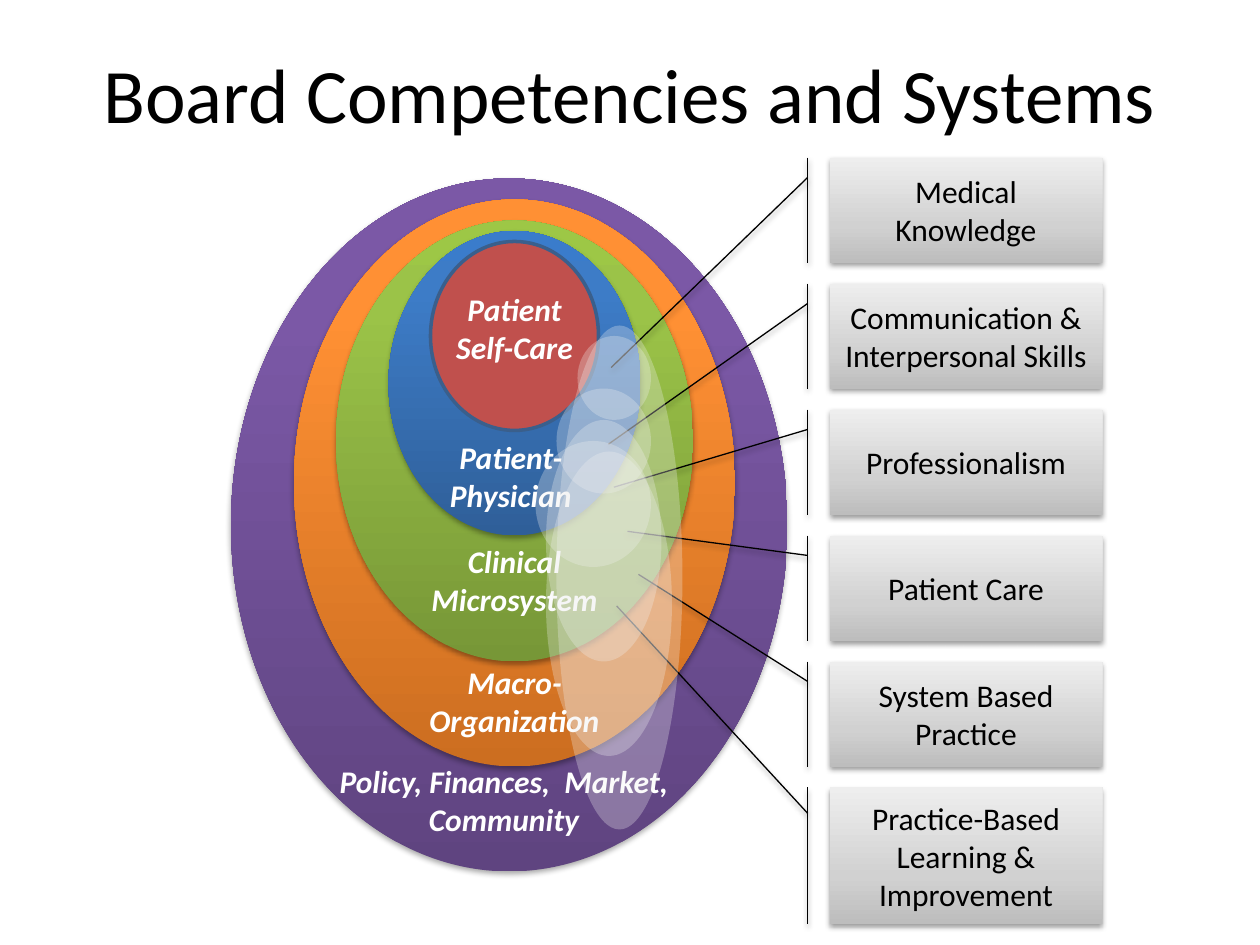
from lxml import etree
from pptx import Presentation
from pptx.dml.color import RGBColor
from pptx.enum.shapes import MSO_SHAPE
from pptx.enum.text import MSO_ANCHOR, MSO_AUTO_SIZE, PP_ALIGN
from pptx.oxml.ns import qn
from pptx.util import Inches, Pt

OVAL = MSO_SHAPE.OVAL
CALLOUT = MSO_SHAPE.LINE_CALLOUT_1_ACCENT_BAR
CENTER = PP_ALIGN.CENTER
MIDDLE, TOP = MSO_ANCHOR.MIDDLE, MSO_ANCHOR.TOP
FIT_TEXT = MSO_AUTO_SIZE.SHAPE_TO_FIT_TEXT

FONT = "Calibri"
UNIT = Inches(1) / 12  # the page is a grid of 120 columns by 90 rows

COLORS = {
    "text": "000000",
    "label": "FFFFFF",
    "core": "C0504D",
    "core_line": "3A5F8C",
    "overlap": "F2F2F2",
    "shadow": "000000",
}
# Gradient stops run from the bottom of a shape to its top.
GRADIENTS = {
    "purple": [(0, "5F4480"), (80, "7B58A6"), (100, "7C57A8")],
    "orange": [(0, "CC6E20"), (80, "FF9034"), (100, "FF9136")],
    "green": [(0, "779737"), (80, "9BC348"), (100, "9DC746")],
    "blue": [(0, "2F5F99"), (80, "3D7CC7"), (100, "3A7CCB")],
    "gray": [(0, "BDBDBD"), (35, "D1D1D1"), (100, "EEEEEE")],
}

# Grid places: column, row, columns wide, rows high
SYSTEMS = [
    ("purple", (22, 17, 53, 66)),
    ("orange", (28, 19, 42, 54)),
    ("green", (32, 21, 34, 42)),
    ("blue", (37, 22, 24, 29)),
]
CORE = (41, 23, 16, 18)
LABELS = [
    ("Patient-Physician", (39, 41.15, 19.3, 8.5)),
    ("Clinical Microsystem", (39, 51, 20, 8.5)),
    ("Macro- Organization", (39, 62.55, 20, 8.5)),
    ("Policy, Finances,  Market, Community", (29, 72, 38, 8.5)),
    ("Patient Self-Care", (41, 27, 16, 8.5)),
]
# Competency, rows high, pointer tip as shares of the box height and width
COMPETENCIES = [
    ("Medical Knowledge", 10, 2.0, -0.8),
    ("Communication & Interpersonal Skills", 10, 1.53, -0.81),
    ("Professionalism", 10, 0.74, -0.79),
    ("Patient Care", 10, -0.04, -0.74),
    ("System Based Practice", 10, -0.83, -0.7),
    ("Practice-Based Learning & Improvement", 13, -1.33, -0.78),
]
OVERLAPS = [
    (52, 43, 12, 29),
    (53, 37, 9, 10),
    (55, 32, 7, 8),
    (53, 31, 12, 48),
    (52, 40, 11, 23),
    (51, 42, 11, 12),
]


def rgb(name):
    return RGBColor.from_string(COLORS[name])


def grid(place):
    return [round(value * UNIT) for value in place]


def add_color(parent, hex_color, alpha=None):
    color = etree.SubElement(parent, qn("a:srgbClr"), val=hex_color)
    if alpha is not None:
        etree.SubElement(color, qn("a:alpha"), val=str(alpha * 1000))


def fill_gradient(shape, name):
    shape.fill.gradient()
    shape.fill.gradient_angle = 90
    stops = shape._element.spPr.find(".//" + qn("a:gsLst"))
    for stop in list(stops):
        stops.remove(stop)
    for position, hex_color in GRADIENTS[name]:
        stop = etree.SubElement(stops, qn("a:gs"), pos=str(position * 1000))
        add_color(stop, hex_color)


def cast_shadow(shape, alpha, distance):
    effects = shape._element.spPr.find(qn("a:effectLst"))
    shadow = etree.SubElement(
        effects, qn("a:outerShdw"), blurRad=str(Pt(3.1)),
        dist=str(Pt(distance)), dir="5400000", rotWithShape="0")
    add_color(shadow, COLORS["shadow"], alpha)


def write_text(box, text, size=18, color="text", bold=False, italic=False,
               anchor=MIDDLE):
    frame = box.text_frame
    frame.word_wrap = True
    frame.vertical_anchor = anchor
    para = frame.paragraphs[0]
    para.alignment = CENTER
    span = para.add_run()
    span.text = text
    span.font.name = FONT
    span.font.size = Pt(size)
    span.font.bold = bold
    span.font.italic = italic
    span.font.color.rgb = rgb(color)


def add_shape(page, kind, place):
    """Add a preset shape with neither outline nor shadow."""
    shape = page.shapes.add_shape(kind, *grid(place))
    shape.shadow.inherit = False
    shape.line.fill.background()
    return shape


def add_title(page, text):
    box = page.shapes.add_textbox(*grid((6, 3.6, 108, 10.4)))
    box.text_frame.margin_left = box.text_frame.margin_right = 0
    write_text(box, text, size=44)


def add_system(page, gradient, place):
    oval = add_shape(page, OVAL, place)
    fill_gradient(oval, gradient)
    cast_shadow(oval, 35, 1.8)


def add_core(page):
    oval = add_shape(page, OVAL, CORE)
    oval.fill.solid()
    oval.fill.fore_color.rgb = rgb("core")
    oval.line.color.rgb = rgb("core_line")
    oval.line.width = Pt(2)


def add_label(page, text, place):
    box = page.shapes.add_textbox(*grid(place))
    write_text(box, text, color="label", bold=True, italic=True, anchor=TOP)
    box.text_frame.auto_size = FIT_TEXT


def add_competency(page, text, place, tip):
    box = add_shape(page, CALLOUT, place)
    for index, value in enumerate((0.19, -0.08, *tip)):
        box.adjustments[index] = value
    fill_gradient(box, "gray")
    box.line.color.rgb = rgb("text")
    box.line.width = Pt(0.75)
    cast_shadow(box, 38, 1.6)
    write_text(box, text)


def add_overlap(page, place):
    oval = add_shape(page, OVAL, place)
    oval.fill.solid()
    oval.fill.fore_color.rgb = rgb("overlap")
    color = oval._element.spPr.find(qn("a:solidFill"))[0]
    etree.SubElement(color, qn("a:alpha"), val="29000")


def main():
    deck = Presentation()
    deck.slide_width, deck.slide_height = grid((120, 90))
    page = deck.slides.add_slide(deck.slide_layouts[6])

    for gradient, place in SYSTEMS:
        add_system(page, gradient, place)
    add_title(page, "Board Competencies and Systems")
    add_core(page)
    for text, place in LABELS:
        add_label(page, text, place)
    for index, (text, rows, *tip) in enumerate(COMPETENCIES):
        add_competency(page, text, (79, 15 + 12 * index, 26, rows), tip)
    for place in OVERLAPS:
        add_overlap(page, place)

    deck.save("out.pptx")


if __name__ == "__main__":
    main()
